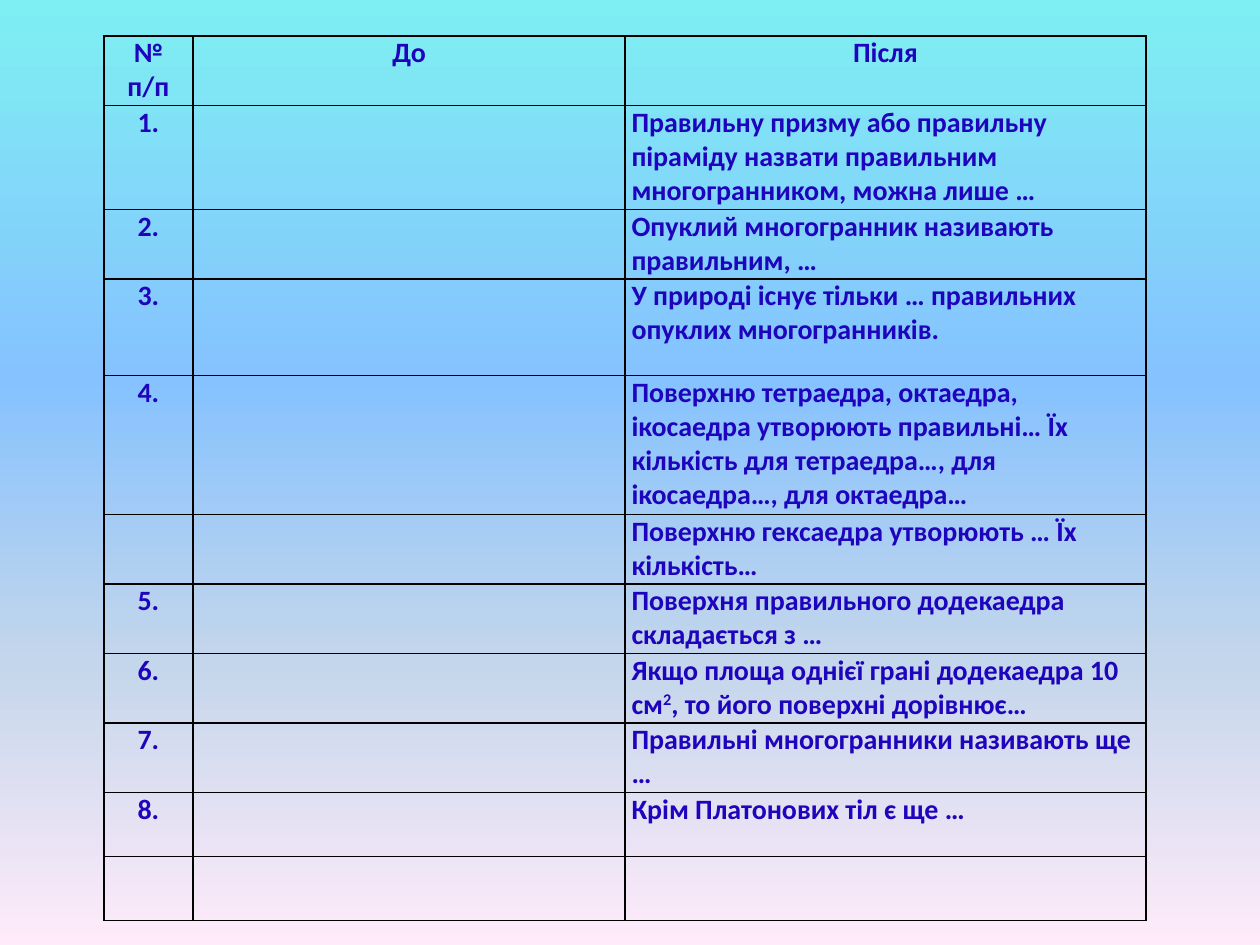
import pptx
import pptx.dml.color
import pptx.enum.text
import pptx.oxml.ns
import pptx.util
from lxml import etree

Pt = pptx.util.Pt
RGB = pptx.dml.color.RGBColor.from_string
ALIGN = pptx.enum.text.PP_ALIGN
qn = pptx.oxml.ns.qn

COLORS = {"text": "1E04BC", "border": "000000"}
BACKGROUND = {0: "7EEFF2", 40: "85C2FF", 70: "C4D6EB", 100: "FFEBFA"}
COL_WIDTHS = [51, 247, 297.5]
TWO_LINES = 39.7
ROWS = [  # height, number, before, after
    (TWO_LINES, "№ п/п", "До", "Після"),
    (59.5, "1.", "", "Правильну призму або правильну піраміду назвати правильним многогранником, можна лише …"),
    (TWO_LINES, "2.", "", "Опуклий многогранник називають правильним, …"),
    (55.3, "3.", "", "У природі існує тільки … правильних опуклих многогранників."),
    (79.4, "4.", "", "Поверхню тетраедра, октаедра, ікосаедра утворюють правильні… Їх кількість для тетраедра…, для ікосаедра…, для октаедра…"),
    (TWO_LINES, "", "", "Поверхню гексаедра утворюють … Їх кількість…"),
    (TWO_LINES, "5.", "", "Поверхня правильного додекаедра складається з …"),
    (TWO_LINES, "6.", "", "Якщо площа однієї грані додекаедра 10 см^2^, то його поверхні дорівнює…"),
    (TWO_LINES, "7.", "", "Правильні многогранники називають ще …"),
    (36.6, "8.", "", "Крім Платонових тіл є ще …"),
    (36.6, "", "", ""),
]


def write(tf, text, size=16, color="text", bold=True, align=ALIGN.LEFT):
    """Fill the first paragraph; text between ^ marks is superscript."""
    p = tf.paragraphs[0]
    p.alignment = align
    for i, part in enumerate(text.split("^")):
        r = p.add_run()
        r.text = part
        r.font.name = "Calibri"
        r.font.size = Pt(size)
        r.font.bold = bold
        r.font.color.rgb = RGB(COLORS[color])
        if i % 2:
            r.font._element.set("baseline", "30000")


def add_borders(cell, width=1):
    tcPr = cell._tc.get_or_add_tcPr()
    for side in ("lnL", "lnR", "lnT", "lnB"):
        ln = etree.SubElement(tcPr, qn("a:" + side), w=str(Pt(width)))
        fill = etree.SubElement(ln, qn("a:solidFill"))
        etree.SubElement(fill, qn("a:srgbClr"), val=COLORS["border"])


prs = pptx.Presentation()
prs.slide_width, prs.slide_height = Pt(720), Pt(540)
s = prs.slides.add_slide(prs.slide_layouts[6])

# Background gradient, top to bottom
fill = s.background.fill
fill.gradient()
fill.gradient_angle = 270
stops = next(s._element.iter(qn("a:gsLst")))
for gs in list(stops):
    stops.remove(gs)
for pos, color in BACKGROUND.items():
    gs = etree.SubElement(stops, qn("a:gs"), pos=str(pos * 1000))
    etree.SubElement(gs, qn("a:srgbClr"), val=color)

# Before / after table
heights = [row[0] for row in ROWS]
table = s.shapes.add_table(len(ROWS), len(COL_WIDTHS), Pt(59.3), Pt(20.5),
                           Pt(sum(COL_WIDTHS)), Pt(sum(heights))).table
table.first_row = table.horz_banding = False
for col, width in zip(table.columns, COL_WIDTHS):
    col.width = Pt(width)
for i, (height, *texts) in enumerate(ROWS):
    table.rows[i].height = Pt(height)
    for j, text in enumerate(texts):
        cell = table.cell(i, j)
        cell.margin_left = cell.margin_right = Pt(3.6)
        cell.margin_top = cell.margin_bottom = 0
        add_borders(cell)
        cell.fill.background()
        if text:
            centred = i == 0 or j == 0
            write(cell.text_frame, text, align=ALIGN.CENTER if centred else ALIGN.LEFT)

prs.save("out.pptx")
